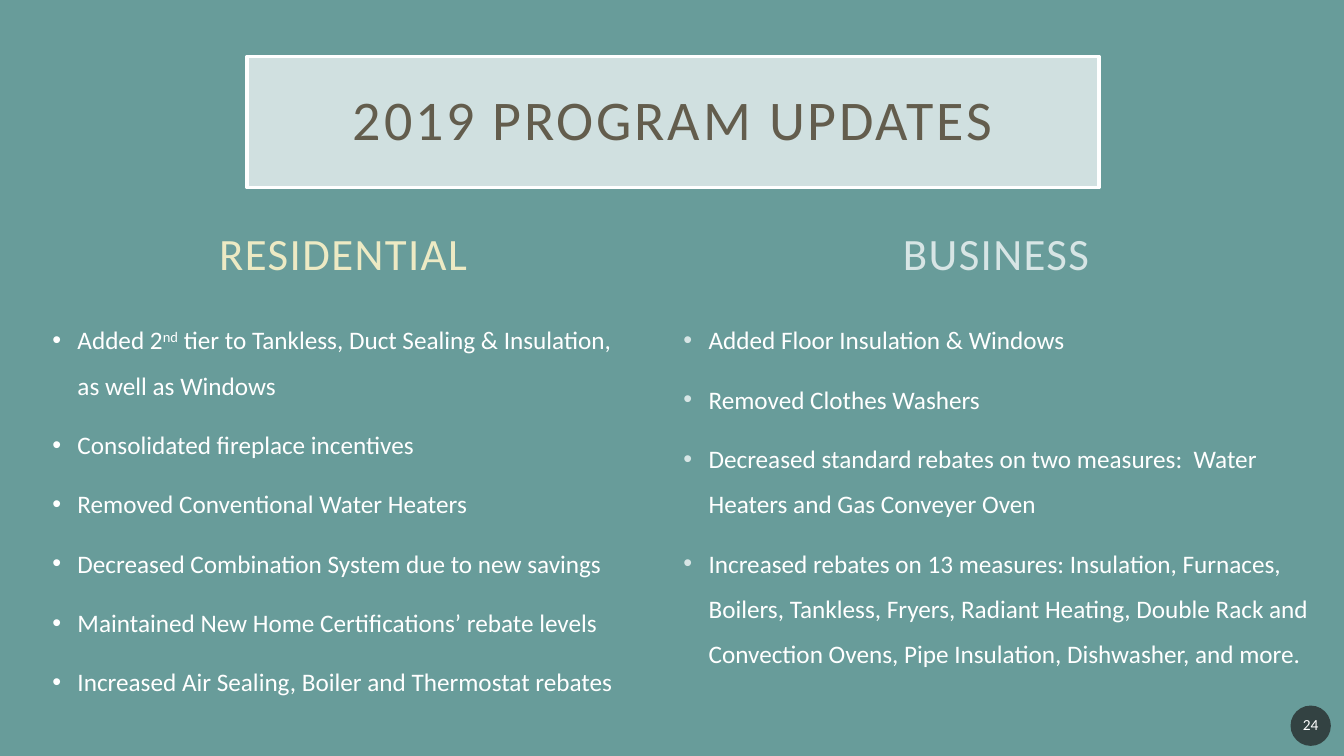
from lxml.etree import SubElement
from pptx import Presentation
from pptx.dml.color import RGBColor
from pptx.enum.shapes import MSO_SHAPE as Shape
from pptx.enum.text import MSO_ANCHOR as Anchor, MSO_AUTO_SIZE as AutoSize, PP_ALIGN as Align
from pptx.oxml.ns import qn
from pptx.util import Inches, Pt

COLORS = {
    "background": "689C9A",
    "panel": "EBF2F2",
    "title": "635D4D",
    "residential": "EDEAC4",
    "business": "D7E5E5",
    "badge": "1D1D1D",
    "white": "FFFFFF",
}
RESIDENTIAL = [
    ["Added 2", "nd", " tier to Tankless, Duct Sealing & Insulation, as well as Windows"],
    ["Consolidated fireplace incentives"],
    ["Removed Conventional Water Heaters"],
    ["Decreased Combination System due to new savings"],
    ["Maintained New Home Certifications’ rebate levels"],
    ["Increased Air Sealing, Boiler and Thermostat rebates"],
]
BUSINESS = [
    ["Added Floor Insulation & Windows"],
    ["Removed Clothes Washers"],
    ["Decreased standard rebates on two measures:  Water Heaters and Gas Conveyer Oven"],
    ["Increased rebates on 13 measures: Insulation, Furnaces, Boilers, Tankless, Fryers, "
     "Radiant Heating, Double Rack and Convection Ovens, Pipe Insulation, Dishwasher, and more."],
]


def rgb(name):
    """Return the named colour."""
    return RGBColor.from_string(COLORS[name])


def fill_with(shape, color, opacity):
    """Give a shape a partly transparent solid fill."""
    shape.fill.solid()
    shape.fill.fore_color.rgb = rgb(color)
    tint = shape.fill._xPr.find(qn("a:solidFill"))[0]
    SubElement(tint, qn("a:alpha"), val=str(opacity * 1000))


def style(paragraph, size, color, tracking=0):
    """Set the font, colour and letter spacing of a paragraph."""
    font = paragraph.font
    font.name, font.size = "Calibri", Pt(size)
    font.color.rgb = rgb(color)
    if tracking:
        paragraph._p.pPr.find(qn("a:defRPr")).set("spc", str(tracking * 100))


def set_insets(frame, horizontal, vertical):
    """Set the inner margins of a text frame."""
    frame.margin_left = frame.margin_right = Inches(horizontal)
    frame.margin_top = frame.margin_bottom = Inches(vertical)


def add_frame(slide, left, top, width, height):
    """Add a wrapping text box and return its text frame."""
    box = slide.shapes.add_textbox(Inches(left), Inches(top), Inches(width), Inches(height))
    box.text_frame.word_wrap = True
    return box.text_frame


def set_title(slide, text):
    """Place and format the framed title."""
    title = slide.shapes.title
    title.left, title.top = Inches(2.45), Inches(0.56)
    title.width, title.height = Inches(8.45), Inches(1.3)
    fill_with(title, "panel", 80)
    title.line.color.rgb = rgb("white")
    title.line.width = Pt(2.5)
    frame = title.text_frame
    frame.text = text
    frame.auto_size = AutoSize.NONE
    frame.vertical_anchor = Anchor.MIDDLE
    set_insets(frame, 0.2, 0.2)
    heading = frame.paragraphs[0]
    heading.alignment, heading.line_spacing = Align.CENTER, 0.9
    style(heading, 40, "title", 2)


def add_heading(slide, text, left, width, color):
    """Add a column heading."""
    frame = add_frame(slide, left, 2.05, width, 0.77)
    frame.vertical_anchor = Anchor.BOTTOM
    heading = frame.paragraphs[0]
    heading.text = text
    heading.alignment, heading.space_before = Align.CENTER, Pt(10)
    style(heading, 32, color, 1)


def add_bullet(paragraph, color):
    """Give a paragraph a hanging coloured bullet."""
    props = paragraph._p.get_or_add_pPr()
    props.set("marL", str(Inches(0.25)))
    props.set("indent", str(Inches(-0.25)))
    SubElement(SubElement(props, qn("a:buClr")), qn("a:srgbClr"), val=COLORS[color])
    SubElement(props, qn("a:buFont"), typeface="Arial")
    SubElement(props, qn("a:buChar"), char="•")


def add_updates(slide, updates, left, width, height, bullet_color):
    """Add a bulleted list; the second part of an update is superscript."""
    frame = add_frame(slide, left, 3.02, width, height)
    for index, parts in enumerate(updates):
        update = frame.add_paragraph() if index else frame.paragraphs[0]
        update.line_spacing, update.space_before = 1.5, Pt(10)
        add_bullet(update, bullet_color)
        style(update, 18, "white")
        for position, part in enumerate(parts):
            run = update.add_run()
            run.text = part
            if position == 1:
                run._r.get_or_add_rPr().set("baseline", "30000")


def add_page_badge(slide, number):
    """Add the round page number badge."""
    badge = slide.shapes.add_shape(Shape.OVAL, Inches(12.8), Inches(7), Inches(0.4), Inches(0.4))
    badge.shadow.inherit = False
    fill_with(badge, "badge", 70)
    badge.line.fill.background()
    frame = badge.text_frame
    frame.vertical_anchor = Anchor.MIDDLE
    set_insets(frame, 0.02, 0.05)
    page = frame.paragraphs[0]
    page.text = number
    page.alignment, page.line_spacing, page.space_after = Align.CENTER, 0.9, Pt(6)
    style(page, 11, "white")


def main():
    """Build and save the program updates slide."""
    deck = Presentation()
    deck.slide_width, deck.slide_height = Inches(13.33), Inches(7.5)
    slide = deck.slides.add_slide(deck.slide_layouts[5])
    slide.background.fill.solid()
    slide.background.fill.fore_color.rgb = rgb("background")
    set_title(slide, "2019 PROGRAM UPDATES")
    add_heading(slide, "RESIDENTIAL", 1.07, 4.67, "residential")
    add_updates(slide, RESIDENTIAL, 0.42, 5.99, 4.18, "white")
    add_heading(slide, "BUSINESS", 8.15, 3.46, "business")
    add_updates(slide, BUSINESS, 6.68, 6.4, 3.92, "business")
    add_page_badge(slide, "24")
    deck.save("out.pptx")


if __name__ == "__main__":
    main()
